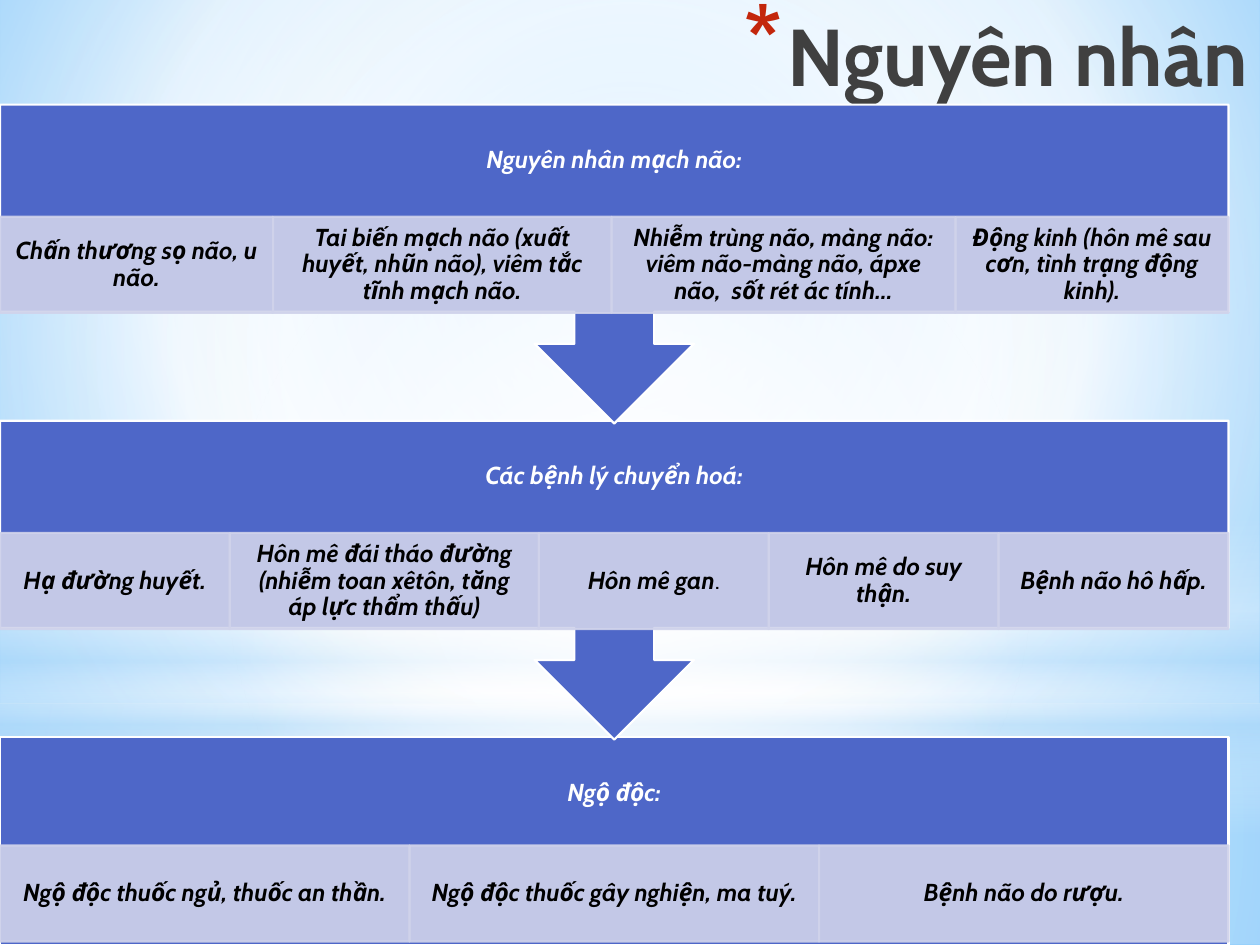
from lxml.etree import SubElement
from pptx import Presentation
from pptx.dml.color import RGBColor
from pptx.enum.shapes import MSO_SHAPE
from pptx.enum.text import MSO_ANCHOR, MSO_AUTO_SIZE, PP_ALIGN
from pptx.oxml.ns import qn
from pptx.util import Pt

FONT = "Cabin"
BLUE, LAVENDER, WHITE, BLACK = "4E67C8", "D0D3EB", "FFFFFF", "000000"
PALE_BLUE = "B4DCFA"
DIAGRAM_WIDTH = 702
FIRST_TOP, ROW_PITCH = 59.8, 180.7
HEADER_HEIGHT, CELL_HEIGHT = 64.1, 54.9
CENTER = (50, 50, 50, 50)

BACKDROPS = [
    (MSO_SHAPE.RECTANGLE, (0, 401.8, 720, 138.2),
     [(0, WHITE, 91), (37, WHITE, 76), (100, PALE_BLUE, 79)], CENTER),
    (MSO_SHAPE.RECTANGLE, (0, 0, 720, 401.8),
     [(0, WHITE, 89), (48, WHITE, 62), (100, PALE_BLUE, 79)], CENTER),
    (MSO_SHAPE.RECTANGLE, (0, 296.6, 720, 180),
     [(0, WHITE, 0), (29, WHITE, 30), (45, PALE_BLUE, 40), (55, WHITE, 26),
      (65, PALE_BLUE, 60), (100, WHITE, 0)], None),
    (MSO_SHAPE.OVAL, (0, 126, 720, 401.8),
     [(0, WHITE, 100), (56, WHITE, 0)], CENTER),
]

CAUSES = [
    ("Nguyên nhân mạch não:", MSO_SHAPE.DOWN_ARROW_CALLOUT, 182.2, 64.1, [
        (156, "Chấn thương sọ não, u não."),
        (193.5, "Tai biến mạch não (xuất huyết, nhũn não), viêm tắc tĩnh mạch não."),
        (196.5, "Nhiễm trùng não, màng não: viêm não-màng não, ápxe não,  sốt rét ác tính..."),
        (156, "Động kinh (hôn mê sau cơn, tình trạng động kinh)."),
    ]),
    ("Các bệnh lý chuyển hoá:", MSO_SHAPE.DOWN_ARROW_CALLOUT, 182.2, 64.1, [
        (131.35, "Hạ đường huyết."),
        (176.6, "Hôn mê đái tháo đường (nhiễm toan xêtôn, tăng áp lực thẩm thấu)"),
        (131.35, "Hôn mê gan", "."),
        (131.35, "Hôn mê do suy thận."),
        (131.35, "Bệnh não hô hấp."),
    ]),
    ("Ngộ độc:", MSO_SHAPE.RECTANGLE, 118.8, 61.9, [
        (234, "Ngộ độc thuốc ngủ, thuốc an thần."),
        (234, "Ngộ độc thuốc gây nghiện, ma tuý."),
        (234, "Bệnh não do rượu."),
    ]),
]


def color(value):
    """Turn a hex string into a colour."""
    return RGBColor.from_string(value)


def paint_gradient(fill, element, stops, focus):
    """Give a fill a gradient, round towards focus or else from top to bottom."""
    fill.solid()
    solid = element.find(".//" + qn("a:solidFill"))
    parent = solid.getparent()
    gradient = SubElement(parent, qn("a:gradFill"), rotWithShape="1")
    parent.replace(solid, gradient)
    stop_list = SubElement(gradient, qn("a:gsLst"))
    for position, value, opacity in stops:
        stop = SubElement(stop_list, qn("a:gs"), pos=str(position * 1000))
        stop_color = SubElement(stop, qn("a:srgbClr"), val=value)
        SubElement(stop_color, qn("a:alpha"), val=str(opacity * 1000))
    if focus:
        circle = SubElement(gradient, qn("a:path"), path="circle")
        sides = {side: str(part * 1000) for side, part in zip("ltrb", focus)}
        SubElement(circle, qn("a:fillToRect"), **sides)
    else:
        SubElement(gradient, qn("a:lin"), ang="5400000", scaled="0")


def add_box(slide, kind, bounds, fill, line=None, opacity=None):
    """Add a flat shape with a plain fill and an optional outline."""
    shape = slide.shapes.add_shape(kind, *map(Pt, bounds))
    shape.shadow.inherit = False
    shape.fill.solid()
    shape.fill.fore_color.rgb = color(fill)
    if line:
        shape.line.color.rgb = color(line)
        shape.line.width = Pt(1.25)
    else:
        shape.line.fill.background()
    if opacity:
        for node in list(shape.element.spPr.iter(qn("a:srgbClr"))):
            SubElement(node, qn("a:alpha"), val=str(opacity * 1000))
    return shape


def write_text(shape, text, text_color, padding, ending=""):
    """Write centred bold italic text, with an optional plain ending."""
    frame = shape.text_frame
    frame.word_wrap = True
    frame.vertical_anchor = MSO_ANCHOR.MIDDLE
    frame.margin_left = frame.margin_right = Pt(7.9)
    frame.margin_top = frame.margin_bottom = Pt(padding)
    paragraph = frame.paragraphs[0]
    paragraph.text = text
    paragraph.alignment = PP_ALIGN.CENTER
    paragraph.line_spacing = 0.9
    if ending:
        paragraph.add_run().text = ending
    for index, run in enumerate(paragraph.runs):
        run.font.name = FONT
        run.font.size = Pt(14)
        run.font.bold = run.font.italic = index == 0
        run.font.color.rgb = color(text_color)


def add_backdrop(slide):
    """Paint the background and its translucent layers."""
    paint_gradient(slide.background.fill, slide.element,
                   [(0, "9ED5FF", 100), (60, WHITE, 100), (100, "5BB9FF", 100)],
                   (20, 10, 20, 60))
    for kind, bounds, stops, focus in BACKDROPS:
        layer = add_box(slide, kind, bounds, WHITE)
        paint_gradient(layer.fill, layer.element.spPr, stops, focus)


def format_title(slide):
    """Place the title above the backdrop, with a red asterisk bullet."""
    title = slide.shapes.title
    title.element.getparent().append(title.element)
    title.left, title.top, title.width, title.height = map(Pt, (66.2, 0, 653.8, 59.8))
    frame = title.text_frame
    frame.text = "Nguyên nhân"
    frame.auto_size = MSO_AUTO_SIZE.NONE
    frame.vertical_anchor = MSO_ANCHOR.TOP
    paragraph = frame.paragraphs[0]
    paragraph.alignment = PP_ALIGN.RIGHT
    font = paragraph.runs[0].font
    font.name, font.size, font.bold = FONT, Pt(46), True
    font.color.rgb = color("404040")
    properties = paragraph._p.get_or_add_pPr()
    properties.set("marL", str(Pt(25.2)))
    properties.set("indent", str(-Pt(25.2)))
    bullet_color = SubElement(properties, qn("a:buClr"))
    SubElement(bullet_color, qn("a:srgbClr"), val="C3260C")
    SubElement(properties, qn("a:buSzPct"), val="128000")
    SubElement(properties, qn("a:buChar"), char="*")


def add_cause(slide, top, heading, kind, height, cell_offset, cells):
    """Add one block of causes: a heading above a row of cells."""
    add_box(slide, kind, (0, top, DIAGRAM_WIDTH, height), BLUE, WHITE)
    header = slide.shapes.add_textbox(0, Pt(top), Pt(DIAGRAM_WIDTH), Pt(HEADER_HEIGHT))
    write_text(header, heading, WHITE, 7.9)
    left = 0
    for width, *texts in cells:
        bounds = (left, top + cell_offset, width, CELL_HEIGHT)
        cell = add_box(slide, MSO_SHAPE.RECTANGLE, bounds, LAVENDER, LAVENDER, 90)
        write_text(cell, texts[0], BLACK, 1.4, *texts[1:])
        left += width


def main():
    """Build the slide from the bottom block up, so arrows overlap the next block."""
    presentation = Presentation()
    presentation.slide_width, presentation.slide_height = Pt(720), Pt(540)
    slide = presentation.slides.add_slide(presentation.slide_layouts[5])
    add_backdrop(slide)
    format_title(slide)
    for index, cause in reversed(list(enumerate(CAUSES))):
        add_cause(slide, FIRST_TOP + index * ROW_PITCH, *cause)
    presentation.save("out.pptx")


if __name__ == "__main__":
    main()
